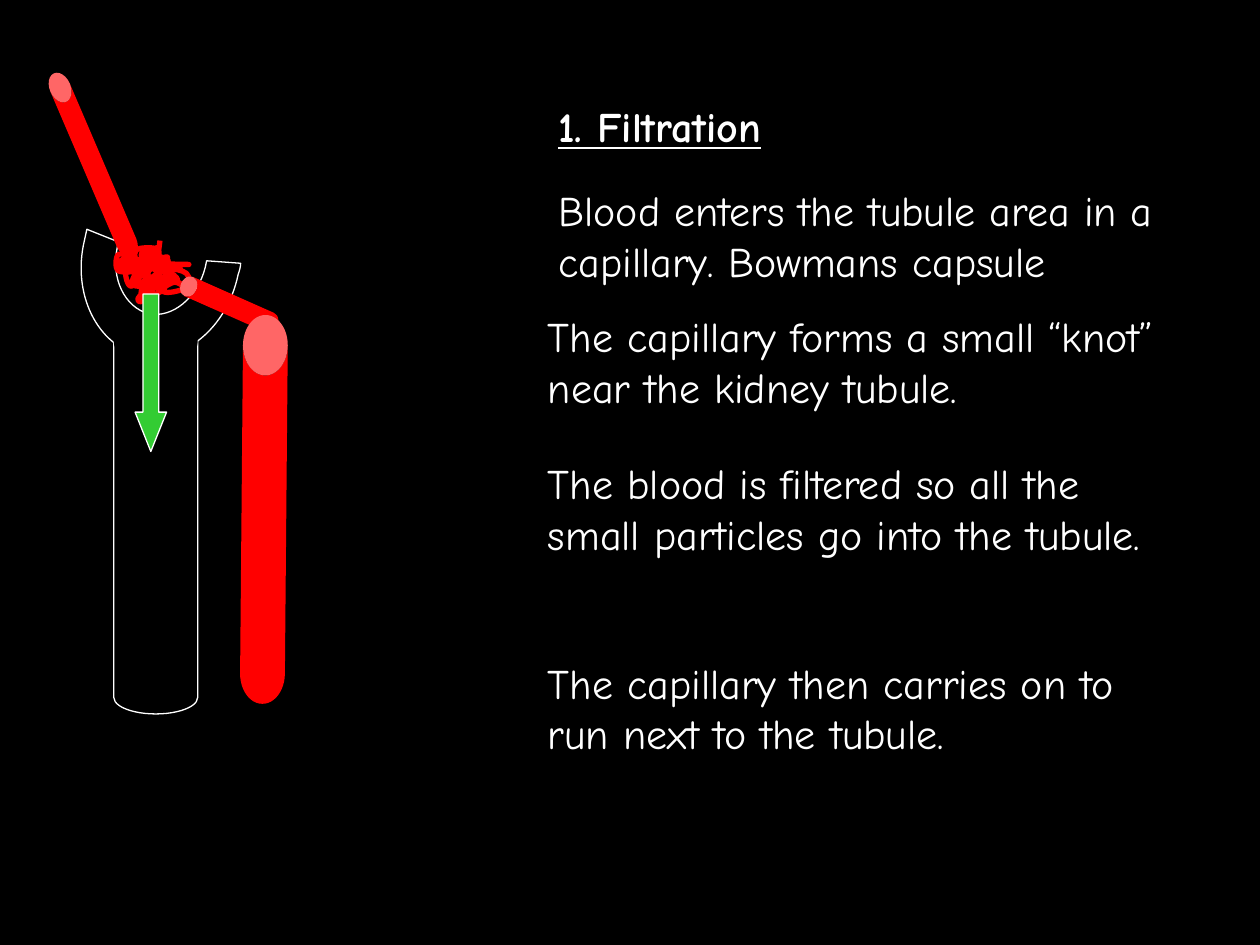
from dataclasses import dataclass
from typing import Optional

from pptx import Presentation
from pptx import util as u
from pptx.dml.color import RGBColor
from pptx.enum import shapes, text
from pptx.oxml import ns, xmlchemy

Point = tuple[float, float]


@dataclass(frozen=True)
class Theme:
    font: str = "Comic Neue"
    body_size: float = 24
    background: str = "000000"
    ink: str = "FFFFFF"
    blood: str = "FF0000"
    flow: str = "33CC33"
    outline: float = 0.75
    knot_line: float = 3


@dataclass(frozen=True)
class Note:
    words: str
    left: float
    top: float
    height: float
    heading: bool = False


@dataclass(frozen=True)
class Part:
    kind: shapes.MSO_SHAPE
    box: tuple[float, float, float, float]
    fill: str
    adjustments: tuple[float, ...] = ()
    rotation: float = 0
    line: Optional[str] = None


THEME = Theme()
NOTE_WIDTH = 366
DRAWING_UNIT = 0.72  # points per step of the outline coordinates
CAN = shapes.MSO_SHAPE.CAN

NOTES = [
    Note("Blood enters the tubule area in a capillary. Bowmans capsule", 312, 102, 65.5),
    Note("The capillary forms a small “knot” near the kidney tubule.", 306, 174, 65),
    Note("The blood is filtered so all the small particles go into the tubule.", 306, 258, 93.5),
    Note("The capillary then carries on to run next to the tubule.", 306, 372, 65),
    Note("1. Filtration", 312, 54, 36, heading=True),
]

TUBULE = Part(CAN, (65, 180, 48, 228), THEME.background, (0.396,), line=THEME.ink)
TUBULE_MOUTH = Part(shapes.MSO_SHAPE.OVAL, (65, 180, 48, 30), THEME.background)
VESSELS_AND_FLOW = [
    Part(CAN, (47.3, 37.3, 12, 114), THEME.blood, (1.479,), 336.8),
    Part(shapes.MSO_SHAPE.DOWN_ARROW, (77.2, 168, 18, 90), THEME.flow, (0.5, 1.25),
         line=THEME.ink),
    Part(CAN, (125, 144, 12, 60), THEME.blood, (0.778,), 293.9),
    Part(CAN, (138, 180, 25.6, 222.2), THEME.blood, (1.35,), 0.5),
]

# Each capsule edge is a run of cubic curves: a start, then threes of points
CAPSULE_INNER = [(164, 207), (164, 209), (163, 210), (163, 212), (157, 236), (137, 253),
                 (118, 249), (99, 244), (88, 221), (93, 197), (93, 195), (94, 193), (94, 192)]
CAPSULE_OUTER = [(69, 182), (68, 185), (68, 188), (67, 191), (57, 233), (77, 274),
                 (111, 282), (145, 289), (180, 261), (189, 218), (190, 215), (191, 212),
                 (191, 209)]

# Points that the capillary knot passes through
KNOT = [
    (127, 191), (125, 213), (131, 206), (116, 200), (112, 203), (119, 207), (131, 207),
    (133, 204), (129, 205), (126, 209), (126, 213), (126, 198), (122, 198), (118, 205),
    (123, 209), (150, 210), (123, 211), (116, 221), (112, 233), (116, 222), (132, 225),
    (136, 221), (131, 221), (133, 218), (131, 216), (115, 210), (117, 216), (123, 208),
    (117, 208), (110, 218), (133, 221), (125, 223), (134, 226), (131, 225), (130, 230),
    (120, 234), (125, 222), (113, 239), (111, 235), (134, 223), (116, 229), (112, 225),
    (121, 220), (125, 216), (121, 213), (107, 205), (94, 202), (94, 215), (112, 215),
    (100, 215), (105, 227), (122, 202), (122, 197), (109, 198), (108, 206), (118, 210),
    (119, 199), (105, 223), (112, 227), (119, 220), (119, 224), (131, 232), (146, 229),
    (139, 224), (130, 228), (139, 221), (136, 217), (132, 218), (150, 228), (148, 217),
    (134, 213), (127, 214), (125, 217), (129, 215), (132, 211), (133, 206), (122, 203),
    (114, 198), (116, 210), (107, 208), (103, 212), (98, 215), (99, 206), (95, 208),
    (95, 213), (106, 204), (100, 205), (102, 209), (109, 211), (113, 209), (116, 209),
    (143, 213), (134, 212), (134, 216), (139, 220), (141, 222), (137, 219), (119, 222),
    (122, 225), (113, 228),
]


def color(value: str) -> RGBColor:
    return RGBColor.from_string(value)


def smooth_controls(anchors: list[Point]) -> list[Point]:
    """Place cubic handles so that a smooth curve passes through the anchors."""
    padded = [anchors[0], *anchors, anchors[-1]]
    controls = [anchors[0]]
    for before, start, end, after in zip(padded, padded[1:], padded[2:], padded[3:]):
        controls.append(tuple(start[i] + (end[i] - before[i]) / 6 for i in (0, 1)))
        controls.append(tuple(end[i] - (after[i] - start[i]) / 6 for i in (0, 1)))
        controls.append(end)
    return controls


def paint(shape, fill: Optional[str], line: Optional[str], width: float) -> None:
    shape.shadow.inherit = False
    if fill:
        shape.fill.solid()
        shape.fill.fore_color.rgb = color(fill)
    else:
        shape.fill.background()
    if line:
        shape.line.color.rgb = color(line)
        shape.line.width = u.Pt(width)
    else:
        shape.line.fill.background()


def draw_part(slide, part: Part) -> None:
    shape = slide.shapes.add_shape(part.kind, *(u.Pt(length) for length in part.box))
    for index, value in enumerate(part.adjustments):
        shape.adjustments[index] = value
    shape.rotation = part.rotation
    paint(shape, part.fill, part.line, THEME.outline)


def draw_curves(slide, runs: list[list[Point]], *, line: str, width: float,
                fill: Optional[str] = None, close: bool = False) -> None:
    """Draw runs of cubic curves, with a straight line from each run to the next."""
    start, *rest = [tuple(u.Pt(value * DRAWING_UNIT) for value in point)
                    for run in runs for point in run]
    builder = slide.shapes.build_freeform(*start)
    builder.add_line_segments(rest, close=close)
    shape = builder.convert_to_shape()
    paint(shape, fill, line, width)

    # Join each three line segments of a run into one cubic curve
    segments = iter(list(shape.element.iter(ns.qn("a:lnTo"))))
    for number, run in enumerate(runs):
        if number:
            next(segments)
        for _ in range(len(run) // 3):
            curve = xmlchemy.OxmlElement("a:cubicBezTo")
            trio = [next(segments) for _ in range(3)]
            trio[0].addprevious(curve)
            for segment in trio:
                curve.append(segment[0])
                segment.getparent().remove(segment)


def write(paragraph, words: str, *, size: float, ink: str, bold: bool = False,
          underline: bool = False) -> None:
    run = paragraph.add_run()
    run.text = words
    run.font.name = THEME.font
    run.font.size = u.Pt(size)
    run.font.color.rgb = color(ink)
    run.font.bold = bold
    run.font.underline = underline


def draw_note(slide, note: Note) -> None:
    box = slide.shapes.add_textbox(u.Pt(note.left), u.Pt(note.top),
                                   u.Pt(NOTE_WIDTH), u.Pt(note.height))
    frame = box.text_frame
    frame.word_wrap = True
    frame.auto_size = text.MSO_AUTO_SIZE.SHAPE_TO_FIT_TEXT
    write(frame.paragraphs[0], note.words, size=THEME.body_size, ink=THEME.ink,
          bold=note.heading, underline=note.heading)


def main() -> None:
    presentation = Presentation()
    presentation.slide_width, presentation.slide_height = u.Pt(720), u.Pt(540)
    slide = presentation.slides.add_slide(presentation.slide_layouts[6])
    slide.background.fill.solid()
    slide.background.fill.fore_color.rgb = color(THEME.background)

    # Explanation
    for note in NOTES:
        draw_note(slide, note)
    # Tubule and its cup-shaped capsule
    draw_part(slide, TUBULE)
    draw_curves(slide, [CAPSULE_INNER, CAPSULE_OUTER], line=THEME.ink,
                width=THEME.outline, fill=THEME.background, close=True)
    draw_part(slide, TUBULE_MOUTH)
    # Capillary knot, vessels and filtration arrow
    draw_curves(slide, [smooth_controls(KNOT)], line=THEME.blood, width=THEME.knot_line)
    for part in VESSELS_AND_FLOW:
        draw_part(slide, part)

    presentation.save("out.pptx")


if __name__ == "__main__":
    main()
